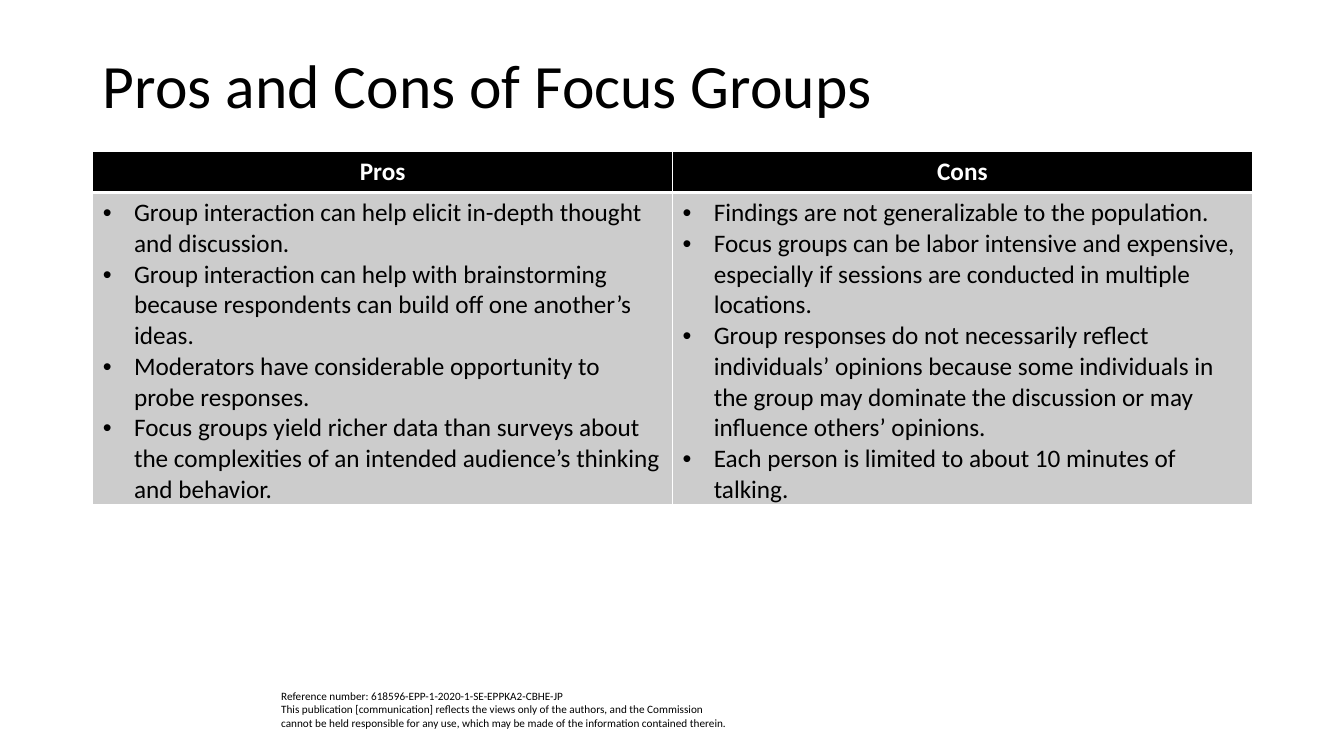
from dataclasses import dataclass

from lxml import etree
from pptx import Presentation
from pptx import util as u
from pptx.dml.color import RGBColor
from pptx.enum import text
from pptx.oxml import ns


@dataclass
class Theme:
    font: str = "Calibri"
    black: str = "000000"
    white: str = "FFFFFF"
    gray: str = "CCCCCC"
    title: int = 44
    body: int = 18
    note: int = 8
    thin: int = 1
    thick: int = 3
    indent: float = 0.31


class Deck:
    def __init__(self, theme):
        self.theme = theme
        self.file = Presentation()
        self.file.slide_width = u.Inches(13.33)
        self.file.slide_height = u.Inches(7.5)
        self.slide = self.file.slides.add_slide(self.file.slide_layouts[5])

    def run(self, para, words, size, color, bold=False):
        run = para.add_run()
        run.text = words
        font = run.font
        font.name, font.size, font.bold = self.theme.font, u.Pt(size), bold
        font.color.rgb = RGBColor.from_string(color)

    def title(self, words, left, top, width, height):
        shape = self.slide.shapes.title
        shape.left, shape.top = u.Inches(left), u.Inches(top)
        shape.width, shape.height = u.Inches(width), u.Inches(height)
        frame = shape.text_frame
        frame.auto_size = text.MSO_AUTO_SIZE.NONE
        frame.vertical_anchor = text.MSO_ANCHOR.MIDDLE
        para = frame.paragraphs[0]
        para.alignment = text.PP_ALIGN.LEFT
        para.line_spacing = 0.9
        self.run(para, words, self.theme.title, self.theme.black)

    def note(self, lines, left, top, width, height):
        box = self.slide.shapes.add_textbox(
            u.Inches(left), u.Inches(top), u.Inches(width), u.Inches(height))
        frame = box.text_frame
        frame.word_wrap = True
        frame.auto_size = text.MSO_AUTO_SIZE.SHAPE_TO_FIT_TEXT
        para = frame.paragraphs[0]
        for index, line in enumerate(lines):
            if index:
                para.add_line_break()
            self.run(para, line, self.theme.note, self.theme.black)

    def bullet(self, para):
        props = para._p.get_or_add_pPr()
        indent = u.Inches(self.theme.indent)
        props.set("marL", str(indent))
        props.set("indent", str(-indent))
        etree.SubElement(props, ns.qn("a:buFont"), typeface="Arial")
        etree.SubElement(props, ns.qn("a:buChar"), char="•")

    def cell(self, cell, fill, top, bottom):
        """Draw the white borders, then the fill that must follow them."""
        thin = self.theme.thin
        props = cell._tc.get_or_add_tcPr()
        for side, width in zip("LRTB", (thin, thin, top, bottom)):
            line = etree.SubElement(props, ns.qn(f"a:ln{side}"), w=str(u.Pt(width)))
            solid = etree.SubElement(line, ns.qn("a:solidFill"))
            etree.SubElement(solid, ns.qn("a:srgbClr"), val=self.theme.white)
        cell.fill.solid()
        cell.fill.fore_color.rgb = RGBColor.from_string(fill)

    def table(self, columns, left, top, width, heights):
        look = self.theme
        grid = self.slide.shapes.add_table(
            2, len(columns), u.Inches(left), u.Inches(top),
            u.Inches(width), u.Inches(sum(heights))).table
        for row, height in zip(grid.rows, heights):
            row.height = u.Inches(height)
        for col, (head, points) in enumerate(columns.items()):
            grid.columns[col].width = u.Inches(width / len(columns))
            # Heading cell
            cell = grid.cell(0, col)
            self.cell(cell, look.black, look.thin, look.thick)
            para = cell.text_frame.paragraphs[0]
            para.alignment = text.PP_ALIGN.CENTER
            self.run(para, head, look.body, look.white, True)
            # Bulleted cell
            cell = grid.cell(1, col)
            self.cell(cell, look.gray, look.thick, look.thin)
            frame = cell.text_frame
            for index, point in enumerate(points):
                para = frame.add_paragraph() if index else frame.paragraphs[0]
                self.bullet(para)
                self.run(para, point, look.body, look.black)


def main():
    deck = Deck(Theme())

    # Reference note
    deck.note([
        "Reference number: 618596-EPP-1-2020-1-SE-EPPKA2-CBHE-JP",
        "This publication [communication] reflects the views only of the authors, "
        "and the Commission cannot be held responsible for any use, which may be "
        "made of the information contained therein.",
    ], 2.69, 6.79, 4.64, 0.5)

    # Title
    deck.title("Pros and Cons of Focus Groups", 0.92, 0.4, 11.5, 0.96)

    # Comparison table
    deck.table({
        "Pros": [
            "Group interaction can help elicit in-depth thought and discussion.",
            "Group interaction can help with brainstorming because respondents "
            "can build off one another’s ideas.",
            "Moderators have considerable opportunity to probe responses.",
            "Focus groups yield richer data than surveys about the complexities "
            "of an intended audience’s thinking and behavior.",
        ],
        "Cons": [
            "Findings are not generalizable to the population.",
            "Focus groups can be labor intensive and expensive, especially if "
            "sessions are conducted in multiple locations.",
            "Group responses do not necessarily reflect individuals’ opinions "
            "because some individuals in the group may dominate the discussion "
            "or may influence others’ opinions.",
            "Each person is limited to about 10 minutes of talking.",
        ],
    }, 0.92, 1.5, 11.5, (0.41, 3.1))

    deck.file.save("out.pptx")


if __name__ == "__main__":
    main()
